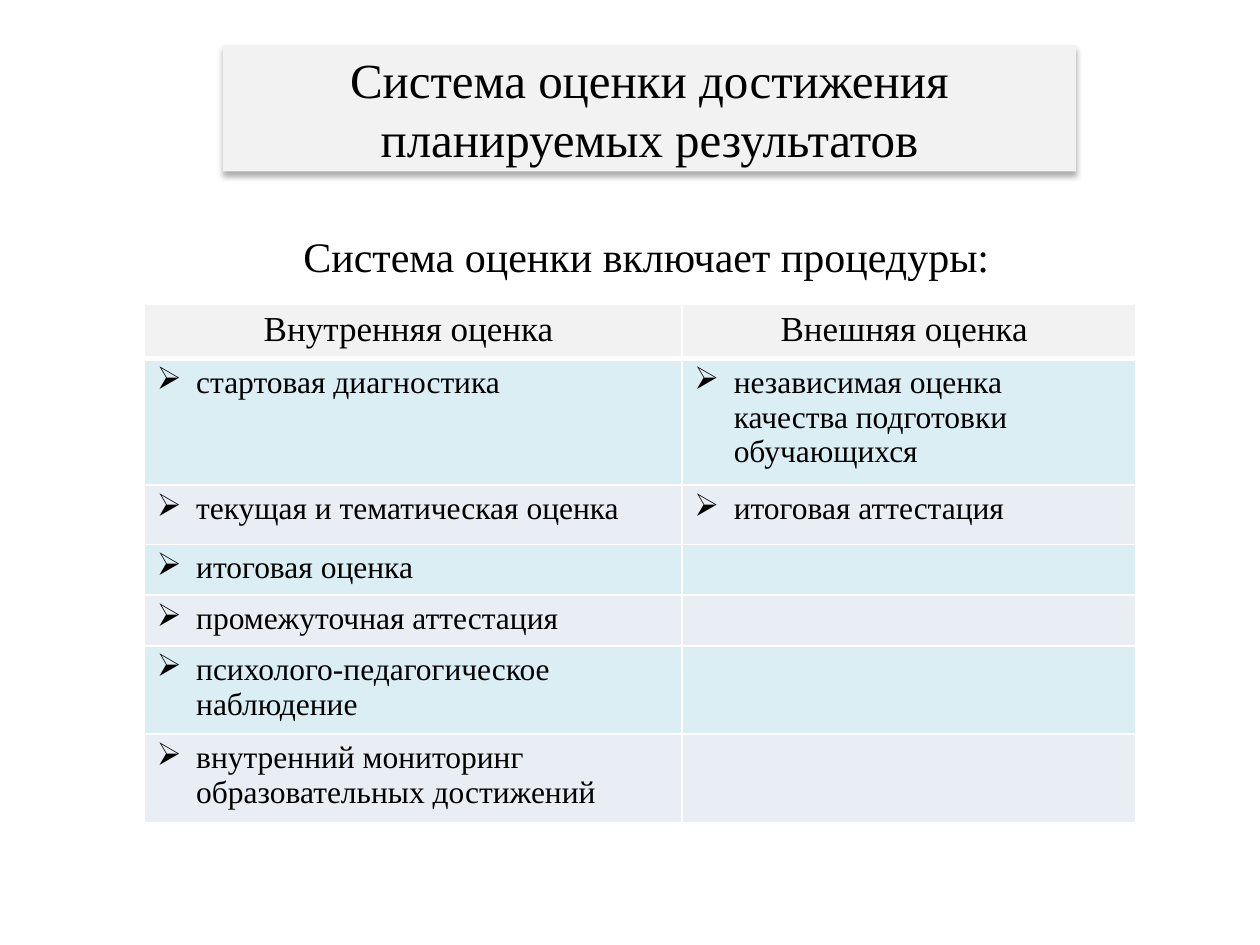
from itertools import zip_longest

from lxml.etree import SubElement
from pptx import Presentation
from pptx.dml.color import RGBColor
from pptx.enum.shapes import MSO_SHAPE as SHAPE
from pptx.enum.text import MSO_ANCHOR as ANCHOR, MSO_AUTO_SIZE as AUTO, PP_ALIGN as ALIGN
from pptx.oxml.ns import qn
from pptx.util import Pt

COLORS = {
    "text": "000000",
    "panel": "F2F2F2",
    "odd": "DBEEF4",
    "even": "E9EDF4",
    "border": "FFFFFF",
}
FONT = "Times New Roman"
INDENT = 22.5
COL_WIDTHS = [307.2, 259.2]
ROW_HEIGHTS = [30, 72, 34, 29, 29, 50.5, 50.5]
HEADERS = ["Внутренняя оценка ", "Внешняя оценка "]
INTERNAL = [
    "стартовая диагностика",
    "текущая и тематическая оценка",
    "итоговая оценка",
    "промежуточная аттестация",
    "психолого-педагогическое наблюдение",
    "внутренний мониторинг образовательных достижений",
]
EXTERNAL = [
    "независимая оценка качества подготовки обучающихся",
    "итоговая аттестация",
]


def rgb(name):
    return RGBColor.from_string(COLORS[name])


def paint(item, color):
    item.fill.solid()
    item.fill.fore_color.rgb = rgb(color)


def write(tf, text, size, align=None):
    p = tf.paragraphs[0]
    p.alignment = align
    r = p.add_run()
    r.text = text
    for key, value in {"name": FONT, "size": Pt(size), "bold": False}.items():
        setattr(r.font, key, value)
    r.font.color.rgb = rgb("text")
    return p


def add_shadow(sp):
    sp.shadow.inherit = False
    effects = sp._element.spPr.find(qn("a:effectLst"))
    shadow = SubElement(effects, qn("a:outerShdw"), blurRad=str(Pt(3.5)),
                        dist=str(Pt(2.2)), dir="5400000", rotWithShape="0")
    color = SubElement(shadow, qn("a:srgbClr"), val="000000")
    SubElement(color, qn("a:alpha"), val="32000")


def add_title(s, text):
    sp = s.shapes.add_shape(SHAPE.RECTANGLE, Pt(127.4), Pt(26), Pt(487.4), Pt(72))
    paint(sp, "panel")
    sp.line.fill.background()
    add_shadow(sp)
    tf = sp.text_frame
    tf.word_wrap = True
    tf.vertical_anchor = ANCHOR.MIDDLE
    write(tf, text, 28, ALIGN.CENTER)


def add_subtitle(s, text):
    tf = s.shapes.add_textbox(Pt(166.3), Pt(128.2), Pt(410.4), Pt(36)).text_frame
    tf.word_wrap = False
    tf.auto_size = AUTO.SHAPE_TO_FIT_TEXT
    write(tf, text, 24)


def add_bullet(p):
    pPr = p._p.get_or_add_pPr()
    pPr.set("marL", str(Pt(INDENT)))
    pPr.set("indent", str(-Pt(INDENT)))
    SubElement(pPr, qn("a:buChar"), char="➢")


def style_cell(cell, color, widths):
    tcPr = cell._tc.get_or_add_tcPr()
    for side, width in widths.items():
        ln = SubElement(tcPr, qn(f"a:ln{side}"), w=str(Pt(width)))
        fill = SubElement(ln, qn("a:solidFill"))
        SubElement(fill, qn("a:srgbClr"), val=COLORS["border"])
    paint(cell, color)


def add_procedures(s):
    rows = [HEADERS, *zip_longest(INTERNAL, EXTERNAL)]
    table = s.shapes.add_table(len(rows), len(HEADERS), Pt(82.4), Pt(173.8),
                               Pt(sum(COL_WIDTHS)), Pt(sum(ROW_HEIGHTS))).table
    for col, width in zip(table.columns, COL_WIDTHS):
        col.width = Pt(width)
    for i, (row, height, texts) in enumerate(zip(table.rows, ROW_HEIGHTS, rows)):
        row.height = Pt(height)
        color = "panel" if i == 0 else "odd" if i % 2 else "even"
        widths = {"L": 1, "R": 1, "T": 3 if i == 1 else 1, "B": 3 if i == 0 else 1}
        for cell, text in zip(row.cells, texts):
            style_cell(cell, color, widths)
            if i == 0:
                write(cell.text_frame, text, 20, ALIGN.CENTER)
            elif text:
                add_bullet(write(cell.text_frame, text, 18))


def main():
    prs = Presentation()
    prs.slide_width, prs.slide_height = Pt(720), Pt(540)
    s = prs.slides.add_slide(prs.slide_layouts[6])
    add_subtitle(s, "Система оценки включает процедуры:")
    add_title(s, "Система оценки достижения планируемых результатов")
    add_procedures(s)
    prs.save("out.pptx")


if __name__ == "__main__":
    main()
